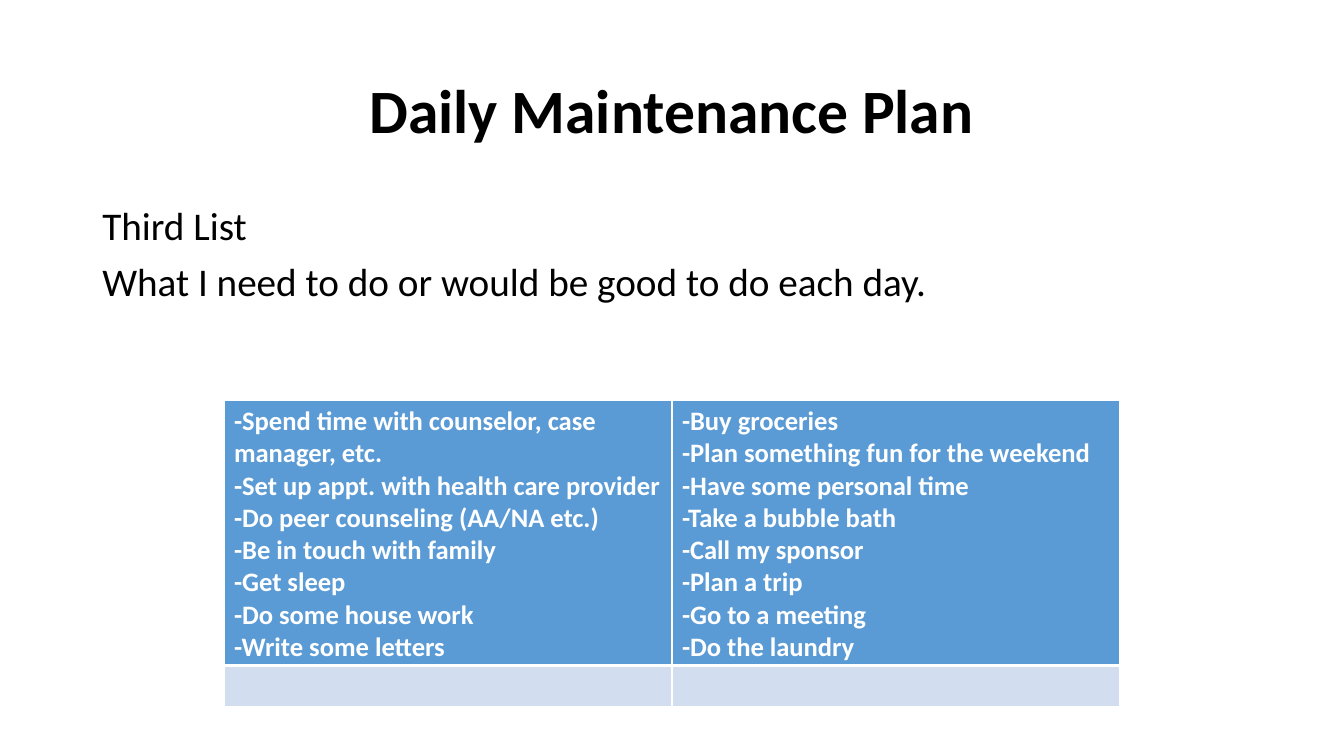
"""Build the Daily Maintenance Plan slide."""
from dataclasses import dataclass

from lxml import etree
from pptx import Presentation
from pptx.dml.color import RGBColor
from pptx.enum.text import MSO_ANCHOR, PP_ALIGN
from pptx.oxml.ns import qn
from pptx.util import Pt

LEFT, CENTER = PP_ALIGN.LEFT, PP_ALIGN.CENTER
TOP, MIDDLE = MSO_ANCHOR.TOP, MSO_ANCHOR.MIDDLE
TITLE_ONLY = 5


@dataclass(frozen=True)
class Theme:
    """Colours and type sizes of the slide."""
    font: str = "Calibri"
    ink: str = "000000"
    paper: str = "FFFFFF"
    header_fill: str = "5B9BD5"
    band_fill: str = "D2DEEF"
    title_size: int = 44
    body_size: int = 28
    table_size: int = 19
    empty_size: int = 18
    thin_line: int = 1
    thick_line: int = 3


THEME = Theme()
INTRO = ["Third List", "What I need to do or would be good to do each day."]
SUPPORT_TASKS = [
    "-Spend time with counselor, case manager, etc.",
    "-Set up appt. with health care provider",
    "-Do peer counseling (AA/NA etc.)",
    "-Be in touch with family",
    "-Get sleep",
    "-Do some house work",
    "-Write some letters",
]
PERSONAL_TASKS = [
    "-Buy groceries",
    "-Plan something fun for the weekend",
    "-Have some personal time",
    "-Take a bubble bath",
    "-Call my sponsor",
    "-Plan a trip",
    "-Go to a meeting",
    "-Do the laundry",
]


def write_lines(frame, lines, size, color, bold=False, align=LEFT, spacing=1.0, before=0):
    """Fill a text frame with one paragraph per line."""
    frame.word_wrap = True
    frame.text = "\n".join(lines)
    for para in frame.paragraphs:
        para.alignment = align
        para.line_spacing = spacing
        para.space_before = Pt(before)
        para.font.name = THEME.font
        para.font.size = Pt(size)
        para.font.bold = bold
        para.font.color.rgb = RGBColor.from_string(color)


def place(shape, left, top, width, height):
    """Position a shape, in points."""
    shape.left, shape.top = Pt(left), Pt(top)
    shape.width, shape.height = Pt(width), Pt(height)


def add_title(page, text):
    """Write the title placeholder."""
    title = page.shapes.title
    place(title, 66, 28.8, 828, 104.4)
    title.text_frame.vertical_anchor = MIDDLE
    write_lines(title.text_frame, [text], THEME.title_size, THEME.ink,
                bold=True, align=CENTER, spacing=0.9)


def add_intro(page, lines):
    """Add the introductory text under the title."""
    box = page.shapes.add_textbox(Pt(66), Pt(144), Pt(828), Pt(342.7))
    box.text_frame.vertical_anchor = TOP
    write_lines(box.text_frame, lines, THEME.body_size, THEME.ink, spacing=0.9, before=10)


def set_borders(cell, top, bottom):
    """Draw the four cell borders in the paper colour."""
    properties = cell._tc.get_or_add_tcPr()
    widths = {"lnL": THEME.thin_line, "lnR": THEME.thin_line, "lnT": top, "lnB": bottom}
    for side, width in widths.items():
        line = etree.SubElement(properties, qn(f"a:{side}"), w=str(Pt(width)))
        fill = etree.SubElement(line, qn("a:solidFill"))
        etree.SubElement(fill, qn("a:srgbClr"), val=THEME.paper)


def add_task_table(page, columns):
    """Add the task lists as a header row above an empty banded row."""
    frame = page.shapes.add_table(2, len(columns), Pt(160), Pt(285.9), Pt(640), Pt(216))
    table = frame.table
    table.rows[0].height, table.rows[1].height = Pt(186.8), Pt(29.2)
    for index, tasks in enumerate(columns):
        header, blank = table.cell(0, index), table.cell(1, index)
        set_borders(header, THEME.thin_line, THEME.thick_line)
        set_borders(blank, THEME.thick_line, THEME.thin_line)
        for cell, color in ((header, THEME.header_fill), (blank, THEME.band_fill)):
            cell.fill.solid()
            cell.fill.fore_color.rgb = RGBColor.from_string(color)
        write_lines(header.text_frame, tasks, THEME.table_size, THEME.paper, bold=True)
        write_lines(blank.text_frame, [], THEME.empty_size, THEME.ink)


def main():
    """Build and save the deck."""
    deck = Presentation()
    deck.slide_width, deck.slide_height = Pt(960), Pt(540)
    page = deck.slides.add_slide(deck.slide_layouts[TITLE_ONLY])
    page.background.fill.solid()
    page.background.fill.fore_color.rgb = RGBColor.from_string(THEME.paper)
    add_title(page, "Daily Maintenance Plan")
    add_intro(page, INTRO)
    add_task_table(page, [SUPPORT_TASKS, PERSONAL_TASKS])
    deck.save("out.pptx")


if __name__ == "__main__":
    main()
